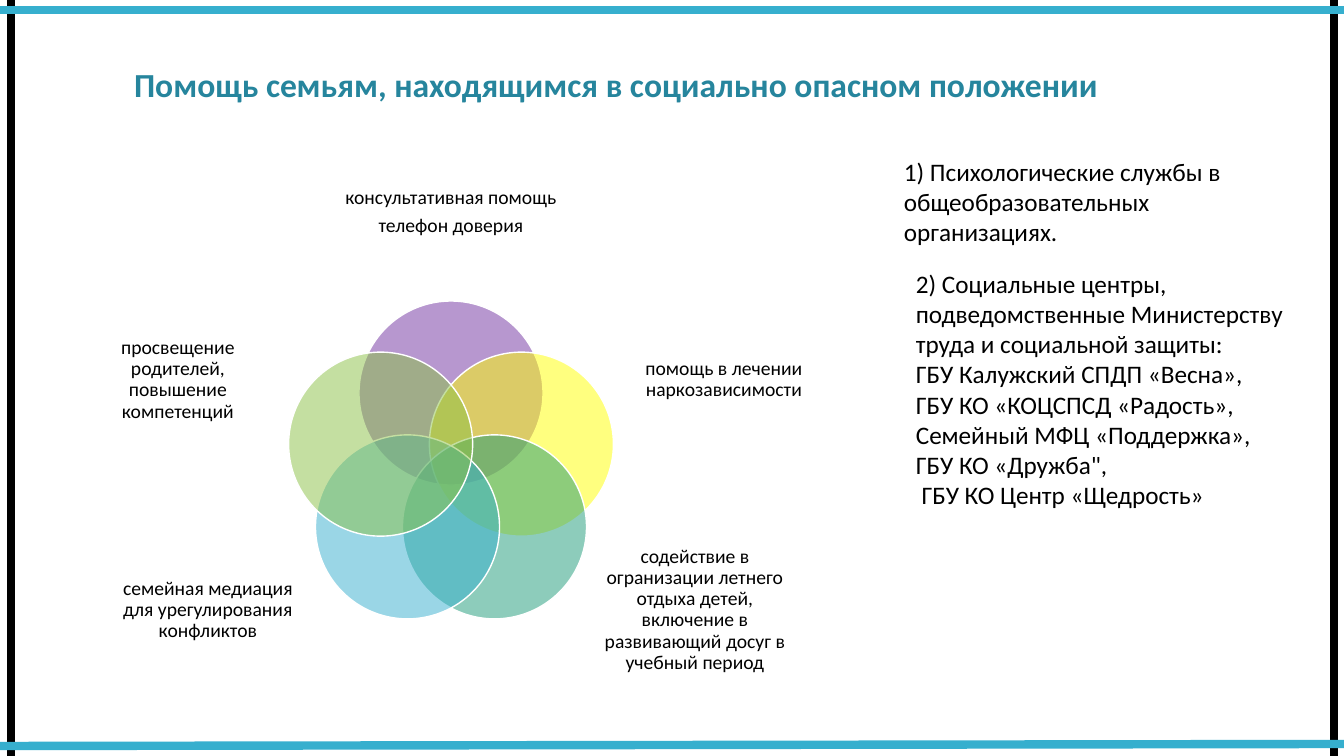
from math import cos, radians, sin

from lxml.etree import SubElement
from pptx import Presentation
from pptx.dml.color import RGBColor
from pptx.enum.shapes import MSO_CONNECTOR as CONN, MSO_SHAPE as SHAPE
from pptx.enum.text import MSO_ANCHOR as ANCHOR, PP_ALIGN as ALIGN
from pptx.oxml.ns import qn
from pptx.util import Pt

SCALE = 914400 / 100.8
COLORS = {
    "black": "000000",
    "white": "FFFFFF",
    "teal": "36AFCE",
    "title": "26859D",
    "purple": "7030A0",
    "yellow": "FFFF00",
    "green": "1D9A78",
    "lime": "8BC141",
}
COLORS["lime"] = "8BC145"


def px(n):
    return round(n * SCALE)


def rgb(name):
    return RGBColor.from_string(COLORS[name])


class Deck:
    font = "Calibri"

    def __init__(self, width, height):
        self.prs = Presentation()
        self.prs.slide_width, self.prs.slide_height = px(width), px(height)
        self.slide = self.prs.slides.add_slide(self.prs.slide_layouts[6])

    def line(self, x1, y1, x2, y2, color):
        s = self.slide.shapes.add_connector(CONN.STRAIGHT, px(x1), px(y1), px(x2), px(y2))
        s.line.color.rgb = rgb(color)
        s.line.width = Pt(6)
        SubElement(s._element.spPr, qn("a:effectLst"))

    def text(self, box, paragraphs, size, color="black", bold=False, wrap=True, align=ALIGN.LEFT):
        s = self.slide.shapes.add_textbox(*map(px, box))
        tf = s.text_frame
        tf.word_wrap = wrap
        for i, words in enumerate(paragraphs):
            p = tf.add_paragraph() if i else tf.paragraphs[0]
            p.text = words
            p.alignment = align
            p.font.name, p.font.size, p.font.bold = self.font, Pt(size), bold
            p.font.color.rgb = rgb(color)
        return tf

    def label(self, box, paragraphs):
        tf = self.text(box, paragraphs, 14, align=ALIGN.CENTER)
        tf.vertical_anchor = ANCHOR.MIDDLE
        tf.margin_left = tf.margin_top = tf.margin_right = tf.margin_bottom = 0
        for p in tf.paragraphs:
            p.line_spacing = 0.9
            p.space_after = Pt(4.9)

    def circle(self, cx, cy, radius, color):
        s = self.slide.shapes.add_shape(
            SHAPE.OVAL, px(cx - radius), px(cy - radius), px(2 * radius), px(2 * radius))
        s.shadow.inherit = False
        s.fill.solid()
        s.fill.fore_color.rgb = rgb(color)
        fill = s._element.spPr.find(qn("a:solidFill"))
        SubElement(fill[0], qn("a:alpha"), val="50000")
        s.line.color.rgb = rgb("white")
        s.line.width = Pt(1)


def main():
    deck = Deck(1344, 756)
    for x in (11, 1334):
        deck.line(x, 0, x, 756, "black")
    deck.line(0, 10, 1344, 10, "teal")
    deck.line(0, 746, 1344, 744, "teal")

    deck.text((120, 59, 992, 50), ["Помощь семьям, находящимся в социально опасном положении"],
              24, "title", bold=True, wrap=False, align=ALIGN.CENTER)
    deck.text((894, 151, 355, 102),
              ["1) Психологические службы в общеобразовательных организациях."], 18)
    deck.text((906, 263, 394, 254), [
        "2) Социальные центры, подведомственные Министерству труда и социальной защиты:",
        "ГБУ Калужский СПДП «Весна»,",
        "ГБУ КО «КОЦСПСД «Радость», Семейный МФЦ «Поддержка», ГБУ КО «Дружба\",",
        " ГБУ КО Центр «Щедрость»",
    ], 18)

    petals = [
        ("purple", (344, 150, 214, 124), ["консультативная помощь", "телефон доверия"]),
        ("yellow", (628, 313, 192, 134), ["помощь в лечении наркозависимости"]),
        ("green", (599, 543, 192, 134),
         ["содействие в огранизации летнего отдыха детей, включение в развивающий досуг "
          "в учебный период"]),
        ("teal", (112, 543, 192, 134), ["семейная медиация для урегулирования конфликтов"]),
        ("lime", (82, 313, 192, 134), ["просвещение родителей, повышение компетенций"]),
    ]
    center_x, center_y, ring, radius = 451, 467, 74, 92
    for i, (color, box, words) in enumerate(petals):
        angle = radians(i * 360 / len(petals))
        deck.circle(center_x + ring * sin(angle), center_y - ring * cos(angle), radius, color)
        deck.label(box, words)

    deck.prs.save("out.pptx")


if __name__ == "__main__":
    main()
